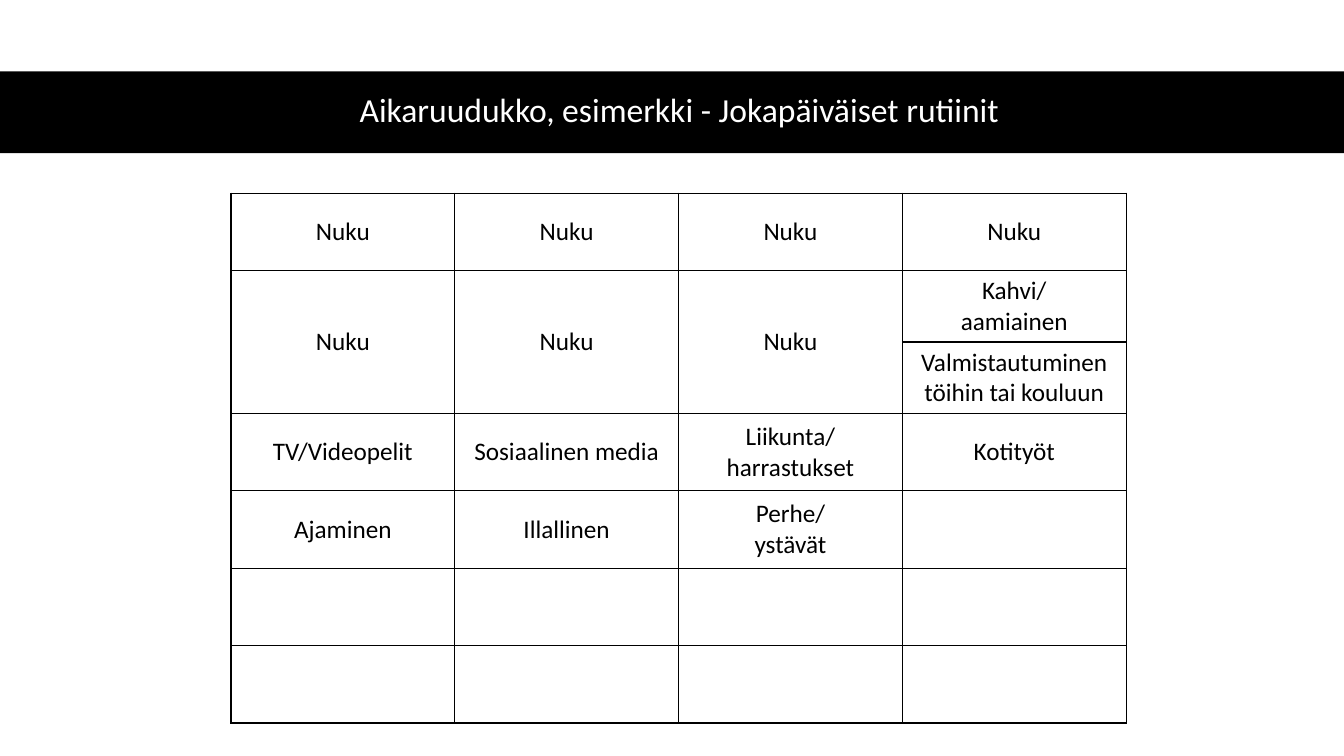
from dataclasses import dataclass

from lxml import etree
from pptx import Presentation
from pptx.dml.color import RGBColor
from pptx.enum.shapes import MSO_SHAPE
from pptx.enum.text import MSO_ANCHOR, PP_ALIGN
from pptx.oxml.ns import qn
from pptx.util import Cm, Pt

RECTANGLE = MSO_SHAPE.RECTANGLE
MIDDLE = MSO_ANCHOR.MIDDLE
CENTER = PP_ALIGN.CENTER


@dataclass(frozen=True)
class Theme:
    font: str = "Calibri"
    black: str = "000000"
    white: str = "FFFFFF"
    title_size: int = 24
    cell_size: int = 18
    border_width: int = 1


theme = Theme()


def write_text(text_frame, text, size, color, line_spacing=None):
    paragraph = text_frame.paragraphs[0]
    paragraph.text = text
    paragraph.alignment = CENTER
    paragraph.line_spacing = line_spacing
    for run in paragraph.runs:
        run.font.name = theme.font
        run.font.size = Pt(size)
        run.font.color.rgb = RGBColor.from_string(color)


def draw_borders(cell):
    properties = cell._tc.get_or_add_tcPr()
    for index, side in enumerate(("lnL", "lnR", "lnT", "lnB")):
        line = etree.Element(qn(f"a:{side}"), w=str(Pt(theme.border_width)))
        fill = etree.SubElement(line, qn("a:solidFill"))
        etree.SubElement(fill, qn("a:srgbClr"), val=theme.black)
        properties.insert(index, line)


presentation = Presentation()
presentation.slide_width = Cm(33.87)
presentation.slide_height = Cm(19.05)
slide = presentation.slides.add_slide(presentation.slide_layouts[6])

# Title band
band = slide.shapes.add_shape(RECTANGLE, 0, Cm(1.8), presentation.slide_width, Cm(2.06))
band.shadow.inherit = False
band.fill.solid()
band.fill.fore_color.rgb = RGBColor.from_string(theme.black)
band.line.fill.background()

title = slide.shapes.add_textbox(Cm(1.55), Cm(1.78), Cm(31.14), Cm(2.06))
title.text_frame.word_wrap = True
title.text_frame.vertical_anchor = MIDDLE
write_text(title.text_frame, "Aikaruudukko, esimerkki - Jokapäiväiset rutiinit",
           size=theme.title_size, color=theme.white, line_spacing=0.9)

# Time grid: the second and third rows share one slot in the first three columns
routines = [
    ["Nuku", "Nuku", "Nuku", "Nuku"],
    ["Nuku", "Nuku", "Nuku", "Kahvi/\naamiainen"],
    ["", "", "", "Valmistautuminen töihin tai kouluun"],
    ["TV/Videopelit", "Sosiaalinen media", "Liikunta/harrastukset", "Kotityöt"],
    ["Ajaminen", "Illallinen", "Perhe/\nystävät", ""],
    ["", "", "", ""],
    ["", "", "", ""],
]
COLUMN_WIDTH = Cm(5.64)
ROW_HEIGHT = Cm(1.95)
HALF_SLOT_HEIGHT = Cm(1.8)
HALF_SLOT_ROWS = (1, 2)

row_heights = [HALF_SLOT_HEIGHT if row in HALF_SLOT_ROWS else ROW_HEIGHT
               for row in range(len(routines))]
column_count = len(routines[0])
grid = slide.shapes.add_table(len(routines), column_count, Cm(5.82), Cm(4.87),
                              COLUMN_WIDTH * column_count, sum(row_heights)).table
grid.first_row = False
grid.horz_banding = False
for column in grid.columns:
    column.width = COLUMN_WIDTH
for row, height in zip(grid.rows, row_heights):
    row.height = height

for row_index, row_texts in enumerate(routines):
    for column_index, text in enumerate(row_texts):
        cell = grid.cell(row_index, column_index)
        cell.fill.background()
        cell.vertical_anchor = MIDDLE
        draw_borders(cell)
        if text:
            write_text(cell.text_frame, text, size=theme.cell_size, color=theme.black)

first_half, second_half = HALF_SLOT_ROWS
for column_index in range(column_count - 1):
    grid.cell(first_half, column_index).merge(grid.cell(second_half, column_index))

presentation.save("out.pptx")
